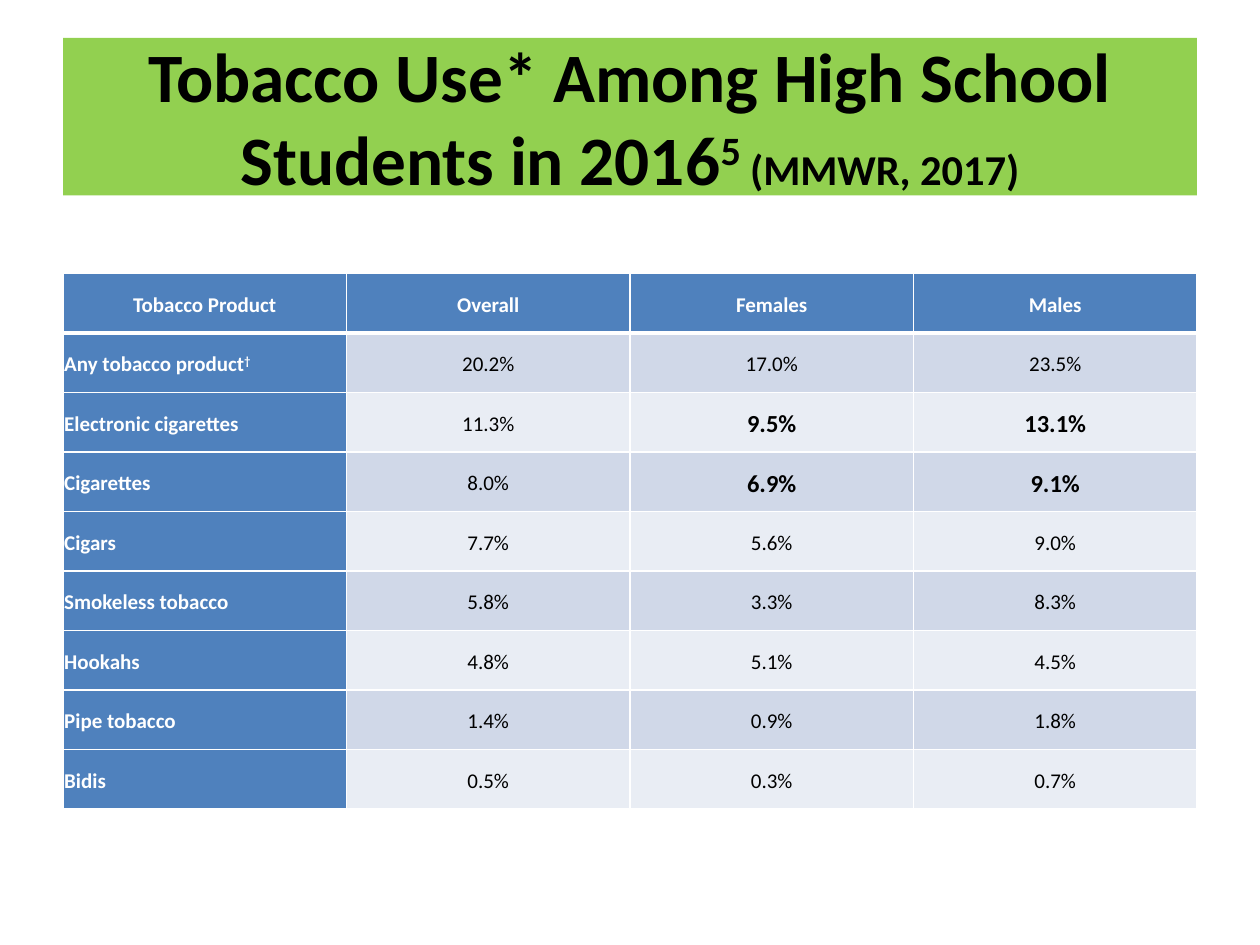
from lxml.etree import SubElement
from pptx import Presentation
from pptx.dml.color import RGBColor
from pptx.enum.text import MSO_ANCHOR, MSO_AUTO_SIZE, PP_ALIGN
from pptx.oxml import parse_xml
from pptx.oxml.ns import nsdecls, qn
from pptx.util import Inches, Pt

FONT = "Calibri"
BLACK, WHITE, GREEN, BLUE = "000000", "FFFFFF", "92D050", "4F81BD"
BANDS = ("D0D8E8", "E9EDF4")
HEADINGS = ("Tobacco Product", "Overall", "Females", "Males")
USE_RATES = (
    ("Any tobacco product", "20.2%", "17.0%", "23.5%"),
    ("Electronic cigarettes", "11.3%", "9.5%", "13.1%"),
    ("Cigarettes", "8.0%", "6.9%", "9.1%"),
    ("Cigars", "7.7%", "5.6%", "9.0%"),
    ("Smokeless tobacco", "5.8%", "3.3%", "8.3%"),
    ("Hookahs", "4.8%", "5.1%", "4.5%"),
    ("Pipe tobacco", "1.4%", "0.9%", "1.8%"),
    ("Bidis", "0.5%", "0.3%", "0.7%"),
)
FOOTNOTES = {"Any tobacco product": "†"}
EMPHASIZED = {(2, 2), (2, 3), (3, 2), (3, 3)}


def fill_solid(target, color):
    """Give a shape or cell a solid fill."""
    target.fill.solid()
    target.fill.fore_color.rgb = RGBColor.from_string(color)


def add_text(paragraph, text, size=12, color=BLACK, bold=False, raised=False):
    """Append a formatted run to a paragraph."""
    run = paragraph.add_run()
    run.text = text
    run.font.name = FONT
    run.font.size = Pt(size)
    run.font.bold = bold
    run.font.color.rgb = RGBColor.from_string(color)
    if raised:
        run.font._element.set("baseline", "30000")


def set_borders(cell, top=1, bottom=1):
    """Draw white lines on the four sides of a cell."""
    properties = cell._tc.get_or_add_tcPr()
    sides = (("lnL", 1), ("lnR", 1), ("lnT", top), ("lnB", bottom))
    for position, (side, width) in enumerate(sides):
        line = parse_xml(f'<a:{side} {nsdecls("a")} w="{Pt(width)}"/>')
        color = SubElement(SubElement(line, qn("a:solidFill")), qn("a:srgbClr"))
        color.set("val", WHITE)
        properties.insert(position, line)


def place_title(title, left, top, width, height):
    """Format the title placeholder as a green banner."""
    title.left, title.top, title.width, title.height = left, top, width, height
    fill_solid(title, GREEN)
    frame = title.text_frame
    frame.word_wrap = True
    frame.auto_size = MSO_AUTO_SIZE.NONE
    frame.vertical_anchor = MSO_ANCHOR.MIDDLE
    heading = frame.paragraphs[0]
    heading.alignment = PP_ALIGN.CENTER
    add_text(heading, "Tobacco Use* Among High School Students in 2016", size=39.6, bold=True)
    add_text(heading, "5 ", size=39.6, bold=True, raised=True)
    add_text(heading, "(MMWR, 2017)", size=24.3, bold=True)


def format_cell(cell, text, row, column):
    """Write one table cell in the style of its row and column."""
    is_label = row == 0 or column == 0
    emphasized = (row, column) in EMPHASIZED
    color = WHITE if is_label else BLACK
    cell.margin_left = cell.margin_right = Inches(0.01)
    cell.margin_top = cell.margin_bottom = Inches(0.01)
    cell.vertical_anchor = MSO_ANCHOR.MIDDLE
    paragraph = cell.text_frame.paragraphs[0]
    paragraph.line_spacing = 1.15
    paragraph.alignment = PP_ALIGN.LEFT if row and column == 0 else PP_ALIGN.CENTER
    add_text(paragraph, text, size=14 if emphasized else 12, color=color,
             bold=is_label or emphasized)
    if text in FOOTNOTES:
        add_text(paragraph, FOOTNOTES[text], color=color, bold=True, raised=True)
    fill_solid(cell, BLUE if is_label else BANDS[(row - 1) % 2])
    set_borders(cell, top=3 if row == 1 else 1, bottom=3 if row == 0 else 1)


def place_rates_table(slide, left, top, width, height):
    """Add the table of tobacco use rates."""
    records = (HEADINGS, *USE_RATES)
    table = slide.shapes.add_table(
        len(records), len(HEADINGS), left, top, width, height).table
    for row, record in enumerate(records):
        for column, text in enumerate(record):
            format_cell(table.cell(row, column), text, row, column)


def main():
    """Build and save the slide."""
    presentation = Presentation()
    presentation.slide_width, presentation.slide_height = Inches(10), Inches(7.5)
    slide = presentation.slides.add_slide(presentation.slide_layouts[5])
    left, width = Inches(0.5), Inches(9)
    place_title(slide.shapes.title, left, Inches(0.3), width, Inches(1.25))
    place_rates_table(slide, left, Inches(2.17), width, Inches(4.25))
    presentation.save("out.pptx")


if __name__ == "__main__":
    main()
